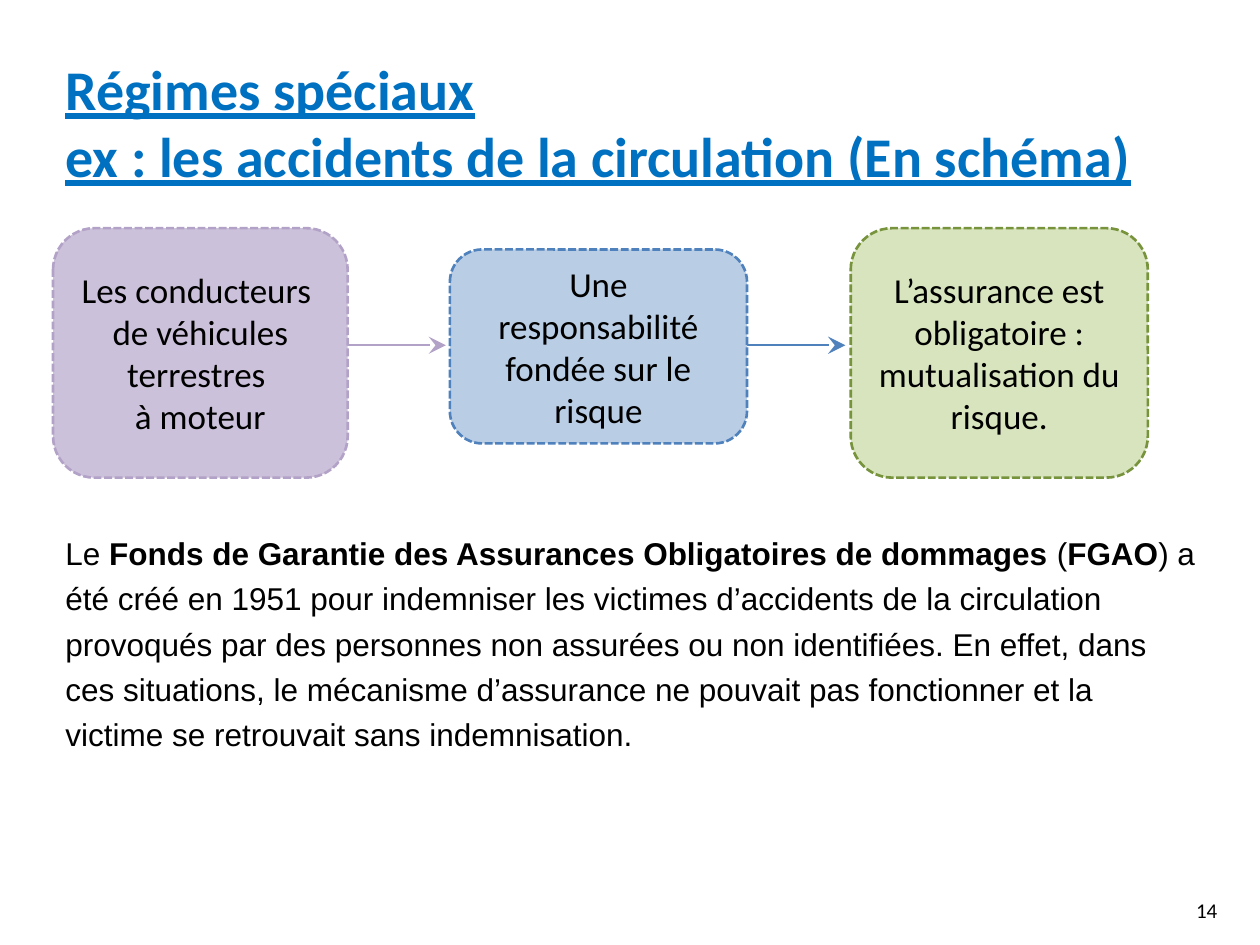
"""Build the slide on special liability schemes for traffic accidents."""
from lxml.etree import SubElement
from pptx import Presentation
from pptx.dml.color import RGBColor
from pptx.enum.dml import MSO_LINE_DASH_STYLE as Dash
from pptx.enum.shapes import MSO_CONNECTOR as Connector, MSO_SHAPE as Shape
from pptx.enum.text import MSO_ANCHOR as Anchor, PP_ALIGN as Align
from pptx.oxml.ns import qn
from pptx.util import Cm, Pt

BLACK = RGBColor(0x00, 0x00, 0x00)
TITLE_BLUE = RGBColor(0x00, 0x70, 0xC0)
LILAC = RGBColor(0xCC, 0xC1, 0xDA)
PURPLE = RGBColor(0xB3, 0xA2, 0xC7)
PALE_BLUE = RGBColor(0xB9, 0xCD, 0xE5)
BLUE = RGBColor(0x4F, 0x81, 0xBD)
PALE_GREEN = RGBColor(0xD7, 0xE4, 0xBD)
GREEN = RGBColor(0x77, 0x93, 0x3C)

TITLE = {"name": "Calibri", "size": Pt(32), "bold": True, "underline": True}
BOX = {"name": "Calibri", "size": Pt(20)}
BODY = {"name": "Arial", "size": Pt(18)}
NUMBER = {"name": "Calibri", "size": Pt(12)}


def write(shape, texts, font_format, color=BLACK, align=Align.LEFT, anchor=Anchor.TOP, spacing=1.0):
    """Write one paragraph per text; parts between asterisks are bold."""
    frame = shape.text_frame
    frame.word_wrap = True
    frame.vertical_anchor = anchor
    for index, text in enumerate(texts):
        paragraph = frame.add_paragraph() if index else frame.paragraphs[0]
        paragraph.alignment = align
        paragraph.line_spacing = spacing
        for part_index, part in enumerate(text.split("*")):
            for line_index, line in enumerate(part.split("\n")):
                if line_index:
                    paragraph.add_line_break()
                run = paragraph.add_run()
                run.text = line
                run.font.color.rgb = color
                run.font.bold = part_index % 2 == 1
                for name, value in font_format.items():
                    setattr(run.font, name, value)


presentation = Presentation()
presentation.slide_width, presentation.slide_height = Cm(25.4), Cm(19.05)
slide = presentation.slides.add_slide(presentation.slide_layouts[6])

title = slide.shapes.add_textbox(Cm(1.07), Cm(0.97), Cm(22.86), Cm(14.33))
write(title, ["Régimes spéciaux\nex : les accidents de la circulation (En schéma)"], TITLE, TITLE_BLUE)

number = slide.shapes.add_textbox(Cm(18.87), Cm(17.83), Cm(5.92), Cm(1.02))
write(number, ["14"], NUMBER, align=Align.RIGHT, anchor=Anchor.MIDDLE)

for left, color in ((6.99, PURPLE), (15.04, BLUE)):
    arrow = slide.shapes.add_connector(Connector.STRAIGHT, Cm(left), Cm(6.96), Cm(left + 2), Cm(6.96))
    arrow.line.color.rgb = color
    arrow.line.width = Pt(1.25)
    SubElement(arrow.line._get_or_add_ln(), qn("a:tailEnd"), type="stealth", w="lg", len="lg")
    SubElement(arrow._element.spPr, qn("a:effectLst"))

boxes = (
    (1.07, 4.6, 5.94, 5.03, LILAC, PURPLE,
     ["Les conducteurs ", "de véhicules terrestres ", "à moteur"]),
    (9.07, 5.03, 5.99, 3.91, PALE_BLUE, BLUE,
     ["Une responsabilité", "fondée sur le risque"]),
    (17.15, 4.6, 5.99, 5.03, PALE_GREEN, GREEN,
     ["L’assurance est obligatoire :", "mutualisation du risque."]),
)
for left, top, width, height, fill, border, texts in boxes:
    box = slide.shapes.add_shape(Shape.ROUNDED_RECTANGLE, Cm(left), Cm(top), Cm(width), Cm(height))
    box.shadow.inherit = False
    box.fill.solid()
    box.fill.fore_color.rgb = fill
    box.line.color.rgb = border
    for name, value in {"width": Pt(1.5), "dash_style": Dash.SQUARE_DOT}.items():
        setattr(box.line, name, value)
    write(box, texts, BOX, align=Align.CENTER, anchor=Anchor.MIDDLE)

body = slide.shapes.add_textbox(Cm(1.07), Cm(10.49), Cm(23.29), Cm(5.72))
write(body, [
    "Le *Fonds de Garantie des Assurances Obligatoires de dommages* (*FGAO*) a été créé en 1951 "
    "pour indemniser les victimes d’accidents de la circulation provoqués par des personnes non "
    "assurées ou non identifiées. En effet, dans ces situations, le mécanisme d’assurance ne "
    "pouvait pas fonctionner et la victime se retrouvait sans indemnisation."
], BODY, spacing=1.2)

presentation.save("out.pptx")
